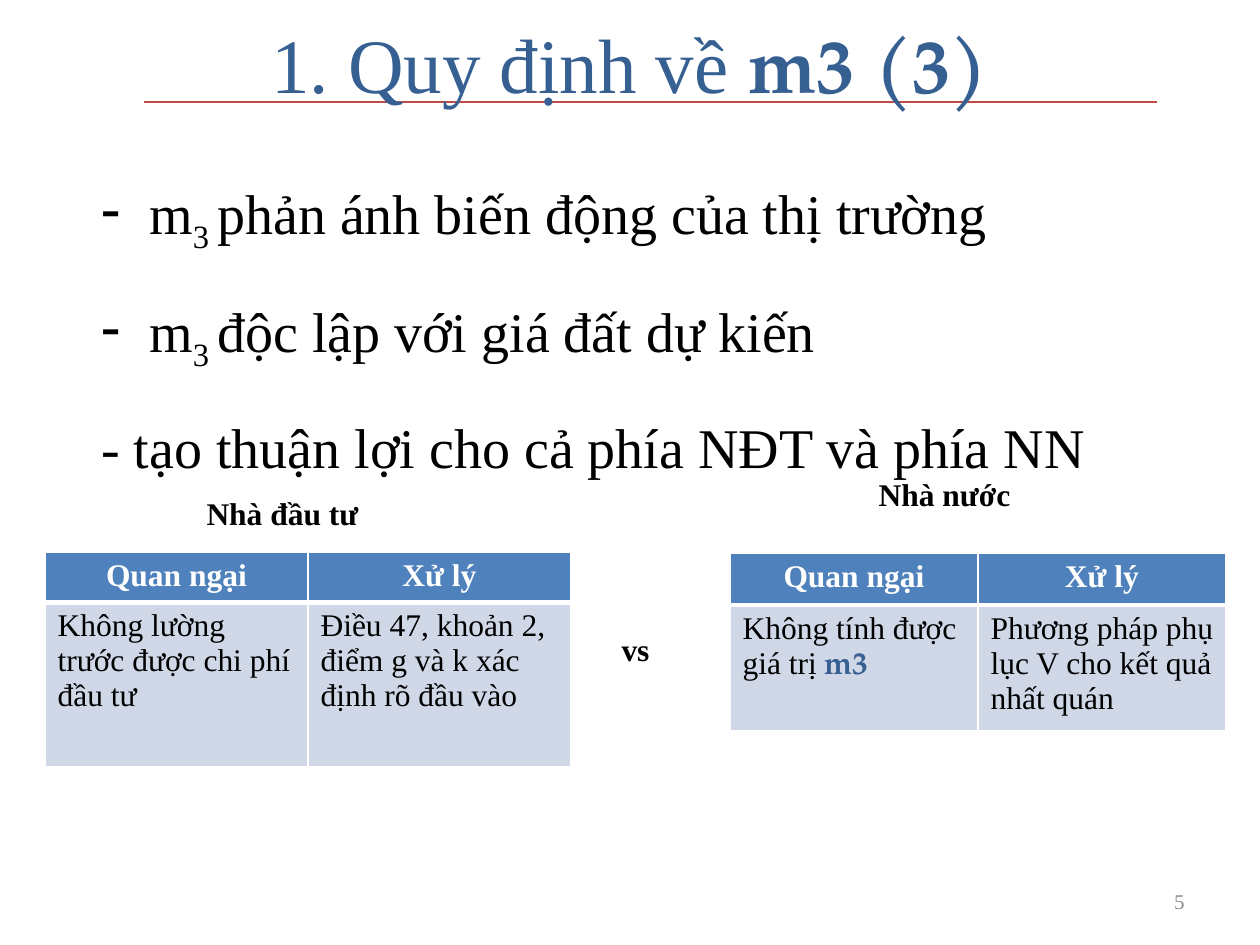
from lxml.etree import SubElement
from pptx import Presentation
from pptx.dml.color import RGBColor
from pptx.enum.shapes import MSO_CONNECTOR
from pptx.enum.text import MSO_ANCHOR, PP_ALIGN
from pptx.oxml.ns import qn
from pptx.util import Emu, Pt

COLORS = {
    "black": "000000",
    "white": "FFFFFF",
    "gray": "8C8C8C",
    "title": "376092",
    "rule": "BF4C48",
    "header": "4F81BD",
    "body": "D0D8E8",
}
SERIF = "Times New Roman"
SYMBOL = "TeX Gyre Pagella"
SYMBOL_STYLE = {"font": SYMBOL, "color": "title", "bold": True}


def px(length):
    return Emu(round(length * 914400 / 126))


def rgb(name):
    return RGBColor.from_string(COLORS[name])


def write(paragraph, text, size=18, font=SERIF, color="black", bold=False, baseline=0):
    run = paragraph.add_run()
    run.text = text
    run.font.size = Pt(size)
    run.font.name = font
    run.font.bold = bold
    run.font.color.rgb = rgb(color)
    if baseline:
        run.font._element.set("baseline", str(baseline * 1000))


def add_box(slide, left, top, width, height, align=PP_ALIGN.CENTER, anchor=MSO_ANCHOR.TOP):
    frame = slide.shapes.add_textbox(px(left), px(top), px(width), px(height)).text_frame
    frame.word_wrap = True
    frame.vertical_anchor = anchor
    frame.paragraphs[0].alignment = align
    return frame


def add_label(slide, text, left, top, width):
    write(add_box(slide, left, top, width, 51).paragraphs[0], text, bold=True)


def add_rule(slide, left, right, y):
    rule = slide.shapes.add_connector(MSO_CONNECTOR.STRAIGHT, px(left), px(y), px(right), px(y))
    rule.line.color.rgb = rgb("rule")
    rule.line.width = Pt(0.75)
    SubElement(rule._element.spPr, qn("a:effectLst"))


def add_points(slide, points):
    frame = add_box(slide, 89, 157, 1081, 270)
    for index, (bulleted, runs) in enumerate(points):
        point = frame.add_paragraph() if index else frame.paragraphs[0]
        if bulleted:
            properties = point._p.get_or_add_pPr()
            properties.set("marL", str(px(48)))
            properties.set("indent", str(px(-48)))
            SubElement(properties, qn("a:buChar"), char="-")
        point.alignment = PP_ALIGN.JUSTIFY
        point.line_spacing = 1.2
        point.space_before = Pt(3 if index else 0)
        point.space_after = Pt(12)
        for text, baseline in runs:
            write(point, text, size=32, baseline=baseline)


def set_borders(cell, bottom):
    properties = cell._tc.get_or_add_tcPr()
    for side, width in (("L", 1), ("R", 1), ("T", 1), ("B", bottom)):
        border = SubElement(properties, qn(f"a:ln{side}"), w=str(Pt(width)))
        fill = SubElement(border, qn("a:solidFill"))
        SubElement(fill, qn("a:srgbClr"), val=COLORS["white"])


def add_concerns(slide, left, top, width, heights, concern, remedy):
    table = slide.shapes.add_table(2, 2, px(left), px(top), px(width), px(sum(heights))).table
    header = [[("Quan ngại", {})], [("Xử lý", {})]]
    for column in table.columns:
        column.width = px(width / 2)
    for row, texts in enumerate((header, [concern, remedy])):
        is_header = row == 0
        table.rows[row].height = px(heights[row])
        for column, runs in enumerate(texts):
            cell = table.cell(row, column)
            set_borders(cell, bottom=3 if is_header else 1)
            cell.fill.solid()
            cell.fill.fore_color.rgb = rgb("header" if is_header else "body")
            paragraph = cell.text_frame.paragraphs[0]
            paragraph.alignment = PP_ALIGN.CENTER if is_header else PP_ALIGN.LEFT
            base = {"color": "white" if is_header else "black", "bold": is_header}
            for text, style in runs:
                write(paragraph, text, **{**base, **style})


def main():
    presentation = Presentation()
    presentation.slide_width = px(1260)
    presentation.slide_height = px(945)
    slide = presentation.slides.add_slide(presentation.slide_layouts[6])

    add_rule(slide, 144, 1157, 102)
    number = add_box(slide, 903, 876, 294, 50, PP_ALIGN.RIGHT, MSO_ANCHOR.MIDDLE)
    write(number.paragraphs[0], "5", size=12, color="gray")
    title = add_box(slide, 63, 0, 1134, 125, anchor=MSO_ANCHOR.MIDDLE).paragraphs[0]
    write(title, "1. Quy định về ", size=44, color="title")
    write(title, "m3 (3)", size=44, **SYMBOL_STYLE)

    add_points(slide, [
        (True, [("m", 0), ("3 ", -25), ("phản ánh biến động của thị trường", 0)]),
        (True, [("m", 0), ("3 ", -25), ("độc lập với giá đất dự kiến", 0)]),
        (False, [("- tạo thuận lợi cho cả phía NĐT và phía NN", 0)]),
    ])

    add_concerns(
        slide, 730, 553, 496, (52, 125),
        [("Không tính được giá trị ", {}), ("m3", SYMBOL_STYLE)],
        [("Phương pháp phụ lục V cho kết quả nhất quán", {})],
    )
    add_concerns(
        slide, 45, 552, 526, (50, 164),
        [("Không lường trước được chi phí đầu tư", {})],
        [("Điều 47, khoản 2, điểm g và k xác định rõ đầu vào", {})],
    )
    add_label(slide, "Nhà nước", 796, 469, 297)
    add_label(slide, "Nhà đầu tư", 134, 488, 297)
    add_label(slide, "vs", 596, 624, 79)

    presentation.save("out.pptx")


if __name__ == "__main__":
    main()
